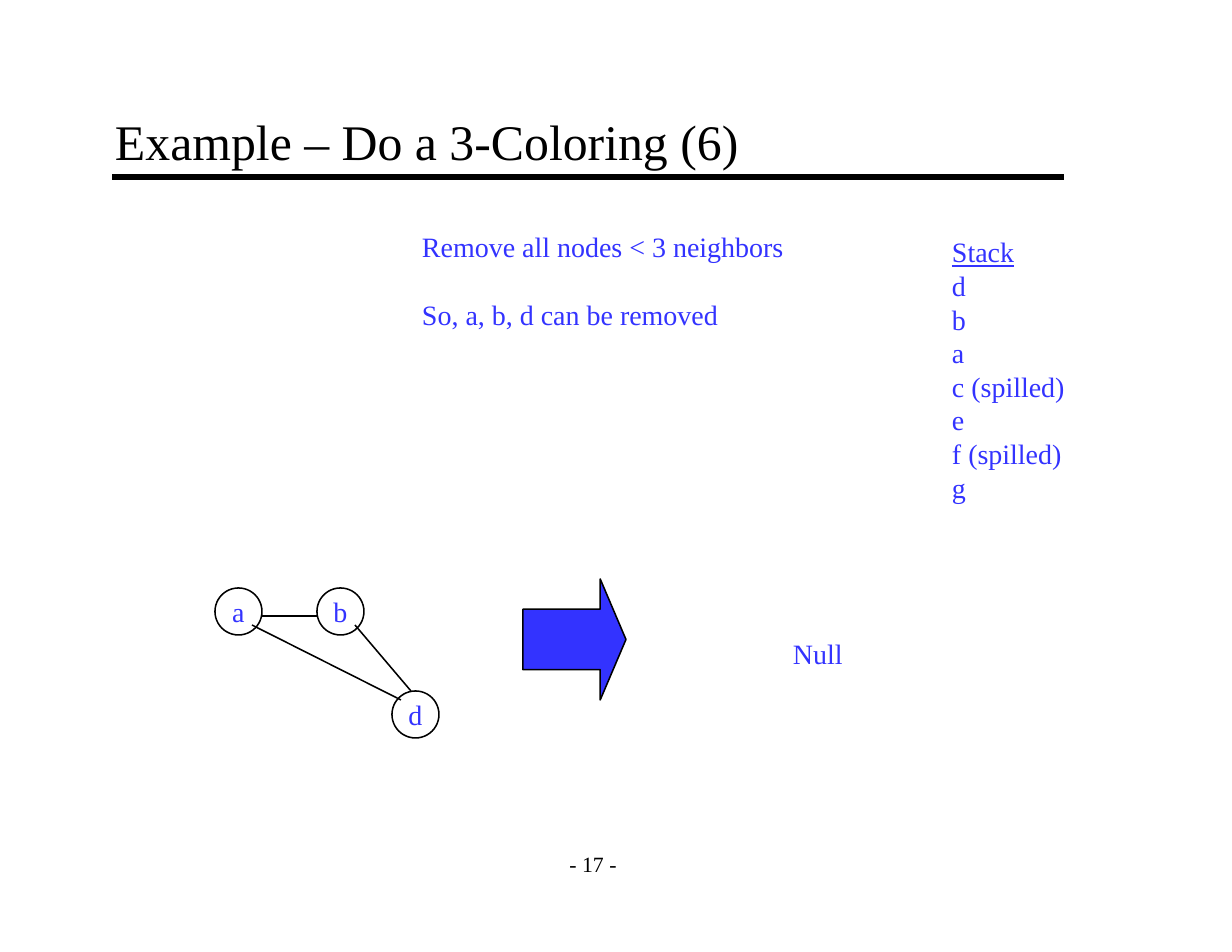
from pptx import Presentation
from pptx.dml.color import RGBColor
from pptx.enum.shapes import MSO_CONNECTOR as Connector, MSO_SHAPE as Shape
from pptx.enum.text import MSO_ANCHOR as Anchor, PP_ALIGN as Align
from pptx.util import Emu, Pt
from lxml import etree

FONT = "Times New Roman"
BLACK = "000000"
BLUE = "3333FF"
DRAWING_NS = "http://schemas.openxmlformats.org/drawingml/2006/main"
NODE_SIZE = 47
NODES = {"a": (0, 0), "b": (102, 0), "d": (177, 103)}
EDGES = [(46, 28, 102, 28), (37, 37, 186, 112), (140, 37, 196, 103)]
STACK = ["d", "b", "a", "c (spilled)", "e", "f (spilled)", "g"]


def px(*lengths):
    return [Emu(round(length * 914400 / 112)) for length in lengths]


def color(value):
    return RGBColor.from_string(value)


def write(frame, lines, size=18, ink=BLUE, align=Align.LEFT, anchor=Anchor.TOP,
          wrap=False, inset=(11, 6), pitch=21.6, gap=0, underline_first=False):
    frame.word_wrap = wrap
    frame.vertical_anchor = anchor
    frame.margin_left, frame.margin_top = px(*inset)
    frame.margin_right, frame.margin_bottom = px(*inset)
    for index, line in enumerate(lines):
        paragraph = frame.add_paragraph() if index else frame.paragraphs[0]
        paragraph.alignment = align
        paragraph.space_before = Pt(gap if index else 0)
        paragraph.line_spacing = Pt(pitch) if pitch else 1.0
        run = paragraph.add_run()
        run.text = line
        run.font.name = FONT
        run.font.size = Pt(size)
        run.font.color.rgb = color(ink)
        run.font.underline = underline_first and index == 0


def add_text(slide, box, lines, **style):
    write(slide.shapes.add_textbox(*px(*box)).text_frame, lines, **style)


def add_outlined(slide, preset, box, fill=None):
    shape = slide.shapes.add_shape(preset, *px(*box))
    shape.shadow.inherit = False
    if fill:
        shape.fill.solid()
        shape.fill.fore_color.rgb = color(fill)
    else:
        shape.fill.background()
    shape.line.color.rgb = color(BLACK)
    shape.line.width = Pt(1)
    return shape


def add_line(slide, ends, width=1):
    line = slide.shapes.add_connector(Connector.STRAIGHT, *px(*ends))
    line.line.color.rgb = color(BLACK)
    line.line.width = Pt(width)
    etree.SubElement(line._element.spPr, f"{{{DRAWING_NS}}}effectLst")


def add_heading(slide, box, text):
    left, top, width, height = box
    add_line(slide, (left + 9, top + 74, left + 961, top + 74), width=4)
    title = slide.shapes.title
    title.left, title.top, title.width, title.height = px(*box)
    write(title.text_frame, [text], size=32, ink=BLACK, anchor=Anchor.BOTTOM,
          wrap=True, inset=(12, 7), pitch=None)


def add_graph(slide, left, top):
    for label, (x, y) in NODES.items():
        node = add_outlined(slide, Shape.OVAL,
                            (left + x, top + y, NODE_SIZE, NODE_SIZE))
        write(node.text_frame, [label], align=Align.CENTER, anchor=Anchor.MIDDLE)
    for x1, y1, x2, y2 in EDGES:
        add_line(slide, (left + x1, top + y1, left + x2, top + y2))


def add_reduction(slide, left, top):
    arrow = add_outlined(slide, Shape.RIGHT_ARROW,
                         (left + 308, top - 9, 103, 121), fill=BLUE)
    arrow.adjustments[0] = 0.5
    arrow.adjustments[1] = 0.25
    add_graph(slide, left, top)
    add_text(slide, (left + 567, top + 42, 73, 45), ["Null"])


def main():
    deck = Presentation()
    deck.slide_width, deck.slide_height = px(1232, 952)
    slide = deck.slides.add_slide(deck.slide_layouts[5])
    add_heading(slide, (103, 103, 952, 75), "Example – Do a 3-Coloring (6)")
    add_text(slide, (411, 224, 384, 112),
             ["Remove all nodes < 3 neighbors", "So, a, b, d can be removed"], gap=21.6)
    add_text(slide, (941, 229, 135, 280), ["Stack", *STACK], underline_first=True)
    add_reduction(slide, 215, 588)
    add_text(slide, (551, 840, 84, 47), ["- 17 -"], size=14, ink=BLACK,
             align=Align.CENTER, anchor=Anchor.MIDDLE, inset=(12, 7), pitch=None)
    deck.save("out.pptx")


if __name__ == "__main__":
    main()
